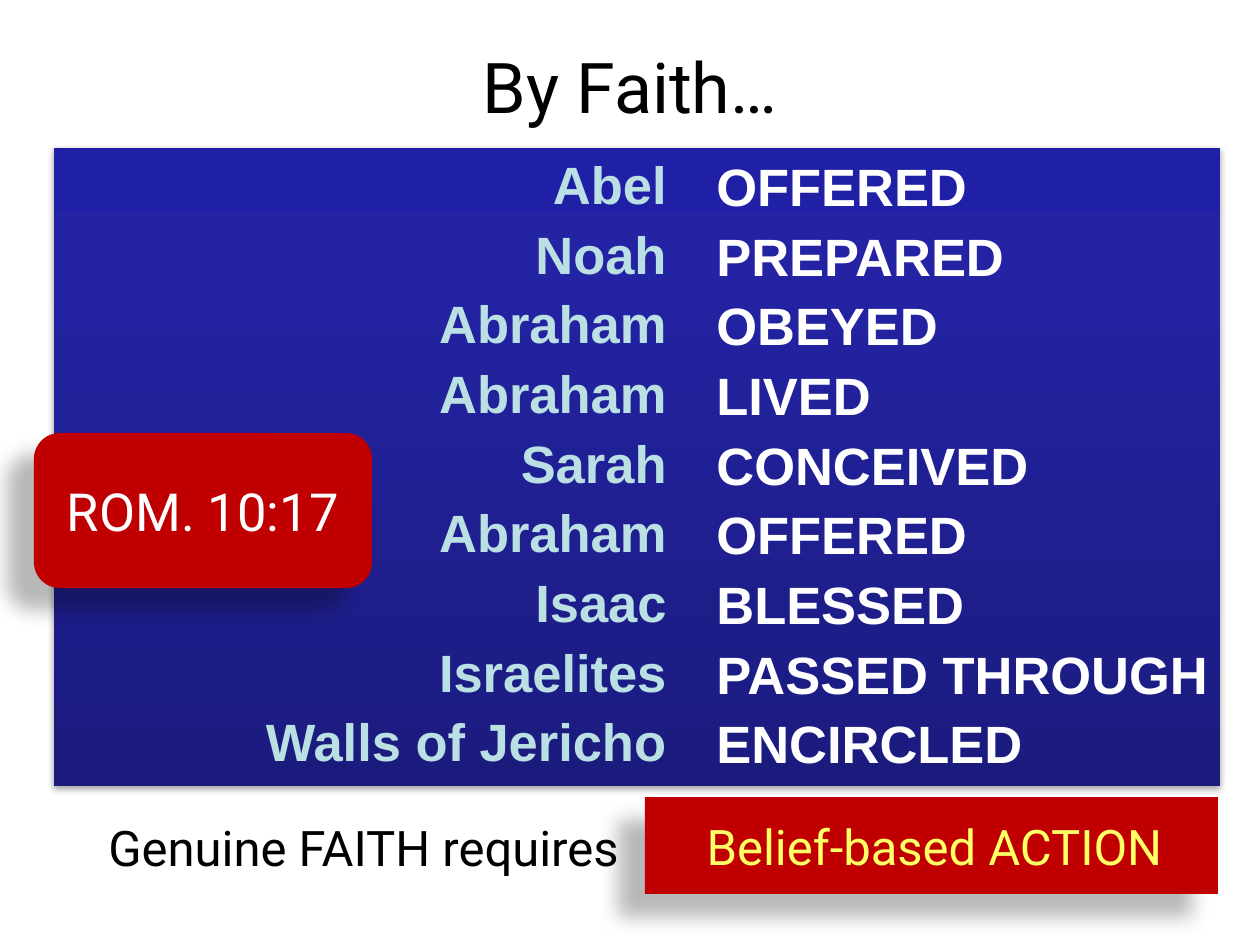
from lxml import etree
from pptx import Presentation
from pptx import util as u
from pptx.dml.color import RGBColor
from pptx.enum import shapes, text
from pptx.oxml import parse_xml
from pptx.oxml.ns import qn

SCALE = 914400 / 126
NS = 'xmlns:a="http://schemas.openxmlformats.org/drawingml/2006/main"'
KIND = shapes.MSO_SHAPE
ALIGN = text.PP_ALIGN
RED = "C00000"
STOPS = [(0, "1B1B7E"), (80, "2323A3"), (100, "2020A6")]
SOFT = dict(alpha=35, blur=3.1, dist=1.8, angle=90)
DEEP = dict(alpha=28, blur=11.8, dist=19.7, angle=141)
DEEDS = [
    ("Abel", "OFFERED"),
    ("Noah", "PREPARED"),
    ("Abraham", "OBEYED"),
    ("Abraham", "LIVED"),
    ("Sarah", "CONCEIVED"),
    ("Abraham", "OFFERED"),
    ("Isaac", "BLESSED"),
    ("Israelites", "PASSED THROUGH"),
    ("Walls of Jericho", "ENCIRCLED"),
]


def px(n):
    return u.Emu(round(n * SCALE))


def color(code):
    return RGBColor.from_string(code)


def assign(item, values):
    for key, value in values.items():
        setattr(item, key, value)


def style(para, words, size, hue, align, face="Roboto", bold=False, **form):
    para.text = words
    assign(para, dict(alignment=align, **form))
    assign(para.font, dict(size=u.Pt(size), name=face, bold=bold))
    para.font.color.rgb = color(hue)


def shade(shape, alpha, blur, dist, angle):
    shape.shadow.inherit = False
    effects = shape._element.spPr.find(qn("a:effectLst"))
    effects.append(parse_xml(
        f'<a:outerShdw {NS} blurRad="{u.Pt(blur)}" dist="{u.Pt(dist)}" '
        f'dir="{angle * 60000}" algn="tl" rotWithShape="0"><a:srgbClr val="000000">'
        f'<a:alpha val="{alpha * 1000}"/></a:srgbClr></a:outerShdw>'))


def block(slide, kind, box, shadow, fill=RED):
    shape = slide.shapes.add_shape(kind, *map(px, box))
    shape.fill.solid()
    shape.fill.fore_color.rgb = color(fill)
    shape.line.fill.background()
    shade(shape, **shadow)
    return shape


def blend(shape, stops, angle):
    shape.fill.gradient()
    grad = shape._element.spPr.find(qn("a:gradFill"))
    for child in list(grad):
        grad.remove(child)
    group = etree.SubElement(grad, qn("a:gsLst"))
    for place, hue in stops:
        stop = etree.SubElement(group, qn("a:gs"), pos=str(place * 1000))
        etree.SubElement(stop, qn("a:srgbClr"), val=hue)
    etree.SubElement(grad, qn("a:lin"), ang=str(angle * 60000), scaled="0")


def label(slide, box, lines, size, hue, align, **form):
    frame = slide.shapes.add_textbox(*map(px, box)).text_frame
    frame.word_wrap = True
    gap = form.pop("gap", 0)
    for i, words in enumerate(lines):
        para = frame.add_paragraph() if i else frame.paragraphs[0]
        style(para, words, size, hue, align, **form)
        if i:
            para.space_before = u.Pt(gap)


def head(slide, words):
    title = slide.shapes.title
    assign(title, dict(zip(("left", "top", "width", "height"),
                           map(px, (0, 11, 1260, 158)))))
    frame = title.text_frame
    assign(frame, dict(margin_left=0, margin_top=0, margin_right=0, margin_bottom=0,
                       vertical_anchor=text.MSO_ANCHOR.MIDDLE, word_wrap=True))
    style(frame.paragraphs[0], words, 40, "000000", ALIGN.CENTER, line_spacing=0.95)


def badge(slide, box, words):
    shape = block(slide, KIND.ROUNDED_RECTANGLE, box, DEEP)
    frame = shape.text_frame
    assign(frame, dict(word_wrap=False, vertical_anchor=text.MSO_ANCHOR.MIDDLE))
    style(frame.paragraphs[0], words, 30, "FFFFFF", ALIGN.CENTER)


def main():
    deck = Presentation()
    assign(deck, dict(slide_width=px(1260), slide_height=px(945)))
    slide = deck.slides.add_slide(deck.slide_layouts[5])
    head(slide, "By Faith…")
    panel = block(slide, KIND.RECTANGLE, (54, 148, 1166, 638), SOFT)
    blend(panel, STOPS, 270)
    block(slide, KIND.RECTANGLE, (645, 797, 573, 97), DEEP)
    names, acts = zip(*DEEDS)
    form = dict(face="Arial", bold=True, line_spacing=0.9, gap=7.4)
    label(slide, (220, 153, 459, 624), names, 30, "BBE0E3", ALIGN.RIGHT, **form)
    label(slide, (704, 155, 556, 624), acts, 30, "FFFFFF", ALIGN.LEFT, **form)
    label(slide, (-28, 811, 671, 72), ["Genuine FAITH requires "], 28, "000000", ALIGN.RIGHT)
    label(slide, (657, 810, 555, 72), ["Belief-based ACTION"], 28, "FFFF66", ALIGN.CENTER)
    badge(slide, (34, 433, 338, 155), "ROM. 10:17")
    deck.save("out.pptx")


if __name__ == "__main__":
    main()
